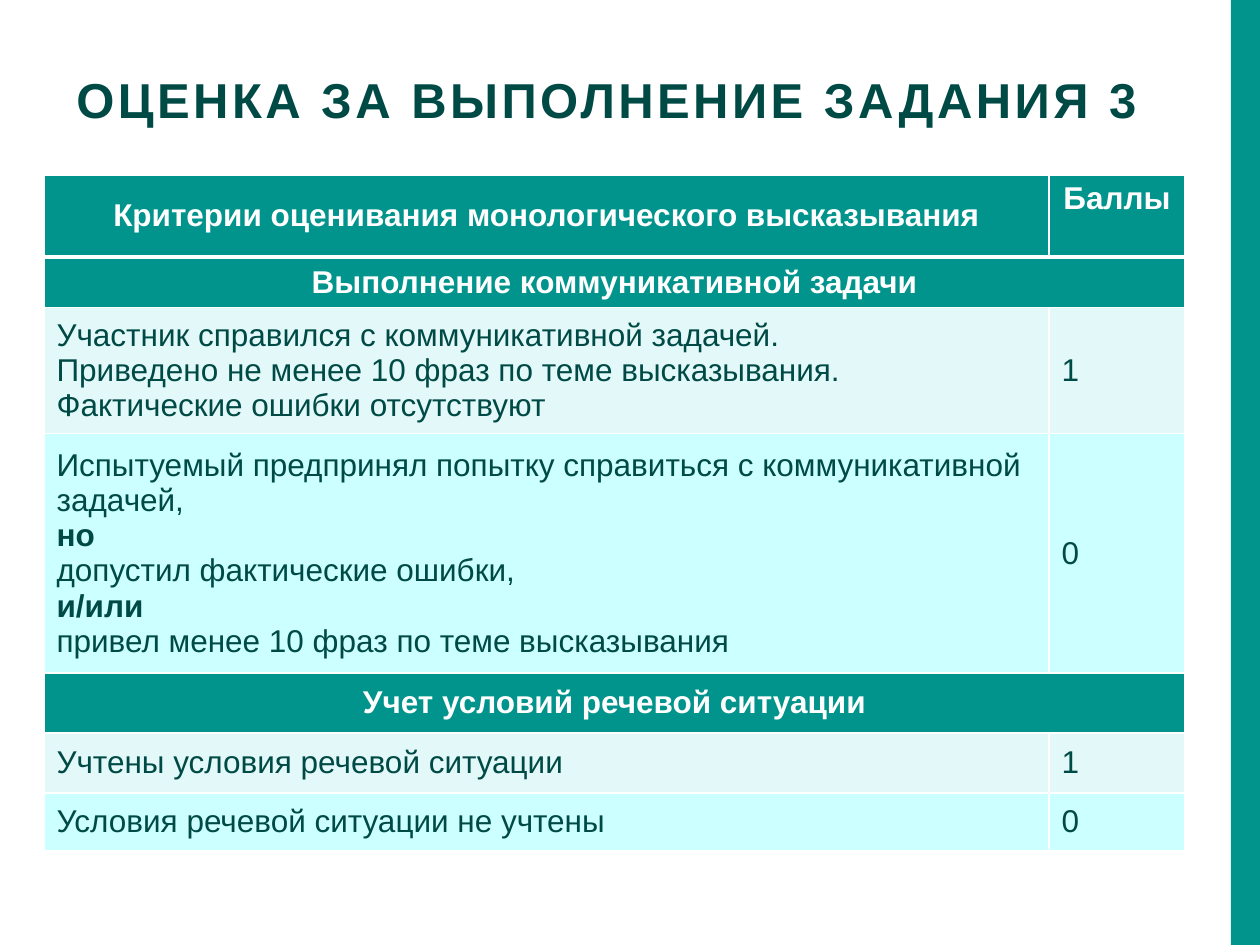
from lxml.etree import SubElement
from pptx import Presentation
from pptx.dml.color import RGBColor
from pptx.enum.shapes import MSO_SHAPE
from pptx.enum.text import MSO_ANCHOR, PP_ALIGN
from pptx.oxml.ns import qn
from pptx.util import Pt

COLORS = {
    "teal": "00948C",
    "ink": "004A46",
    "white": "FFFFFF",
    "pale": "E3F8F9",
    "aqua": "CCFFFF",
}
COLUMNS = [1005, 136]
ROWS = [
    (82, "teal", [["Критерии оценивания монологического высказывания"], ["Баллы"]]),
    (48, "teal", [["Выполнение коммуникативной задачи"]]),
    (122, "pale", [[
        "Участник справился с коммуникативной задачей.",
        "Приведено не менее 10 фраз по теме высказывания.",
        "Фактические ошибки отсутствуют",
    ], ["1"]]),
    (230, "aqua", [[
        "Испытуемый предпринял попытку справиться с коммуникативной задачей,",
        "но",
        "допустил фактические ошибки,",
        "и/или",
        "привел менее 10 фраз по теме высказывания",
    ], ["0"]]),
    (60, "teal", [["Учет условий речевой ситуации"]]),
    (60, "pale", [["Учтены условия речевой ситуации"], ["1"]]),
    (58, "aqua", [["Условия речевой ситуации не учтены"], ["0"]]),
]
CONJUNCTIONS = {"но", "и/или"}


def px(length):
    return round(length * 914400 / 126)


def color(name):
    return RGBColor.from_string(COLORS[name])


def add_span(para, text, size, ink, bold):
    span = para.add_run()
    span.text = text
    span.font.name = "Arial"
    span.font.size = Pt(size)
    span.font.bold = bold
    span.font.color.rgb = color(ink)
    return span


def add_side_bar(page, box):
    bar = page.shapes.add_shape(MSO_SHAPE.RECTANGLE, *map(px, box))
    bar.shadow.inherit = False
    bar.fill.solid()
    bar.fill.fore_color.rgb = color("teal")
    bar.line.fill.background()


def add_title(page, box, text):
    frame = page.shapes.add_textbox(*map(px, box)).text_frame
    frame.word_wrap = True
    frame.vertical_anchor = MSO_ANCHOR.TOP
    frame.margin_top = px(11)
    para = frame.paragraphs[0]
    para.line_spacing = 0.9
    span = add_span(para, text, 28, "ink", True)
    span.font._element.set("spc", "200")


def set_borders(cell, widths):
    properties = cell._tc.get_or_add_tcPr()
    for side, width in zip("LRTB", widths):
        line = SubElement(properties, qn(f"a:ln{side}"), w=str(Pt(width)))
        fill = SubElement(line, qn("a:solidFill"))
        SubElement(fill, qn("a:srgbClr"), val=COLORS["white"])


def fill_cell(cell, lines, heading):
    cell.vertical_anchor = MSO_ANCHOR.MIDDLE
    frame = cell.text_frame
    for index, text in enumerate(lines):
        para = frame.add_paragraph() if index else frame.paragraphs[0]
        para.alignment = PP_ALIGN.CENTER if heading else PP_ALIGN.LEFT
        ink = "white" if heading else "ink"
        add_span(para, text, 18, ink, heading or text in CONJUNCTIONS)


def add_criteria_table(page, left, top):
    width = sum(COLUMNS)
    height = sum(row[0] for row in ROWS)
    shape = page.shapes.add_table(
        len(ROWS), len(COLUMNS), px(left), px(top), px(width), px(height)
    )
    table = shape.table
    for column, column_width in zip(table.columns, COLUMNS):
        column.width = px(column_width)
    for index, (row_height, background, texts) in enumerate(ROWS):
        table.rows[index].height = px(row_height)
        cells = [table.cell(index, column) for column in range(len(COLUMNS))]
        for cell in cells:
            set_borders(cell, (1, 1, 3 if index == 1 else 1, 3 if index == 0 else 1))
            cell.fill.solid()
            cell.fill.fore_color.rgb = color(background)
        if len(texts) == 1:
            cells[0].merge(cells[-1])
        for cell, lines in zip(cells, texts):
            fill_cell(cell, lines, background == "teal")
    table.cell(0, 1).vertical_anchor = MSO_ANCHOR.TOP


def main():
    deck = Presentation()
    deck.slide_width, deck.slide_height = px(1260), px(945)
    page = deck.slides.add_slide(deck.slide_layouts[6])
    add_side_bar(page, (1231, 0, 29, 945))
    add_title(page, (64, 65, 1134, 90), "ОЦЕНКА ЗА ВЫПОЛНЕНИЕ ЗАДАНИЯ 3")
    add_criteria_table(page, 44, 175)
    deck.save("out.pptx")


if __name__ == "__main__":
    main()
